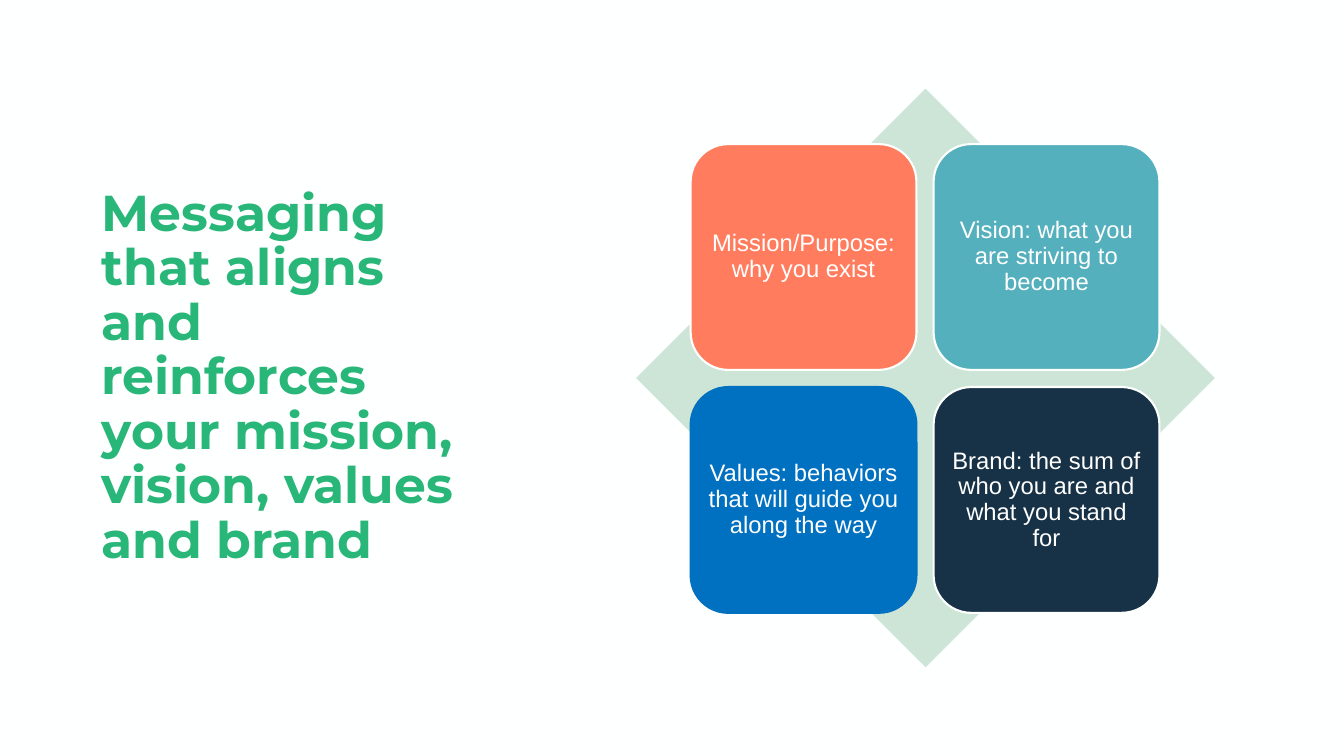
from dataclasses import dataclass

from pptx import Presentation
from pptx.dml.color import RGBColor
from pptx.enum.shapes import MSO_SHAPE
from pptx.enum.text import MSO_ANCHOR, PP_ALIGN
from pptx.util import Pt

PX = 9144  # EMU per px, 100 px to the inch


@dataclass(frozen=True)
class Theme:
    paper: str = "FEFFFF"
    title: str = "28B679"
    back: str = "CDE5D7"
    coral: str = "FF7D5E"
    teal: str = "54B0BD"
    blue: str = "0070C0"
    navy: str = "173246"
    text: str = "FFFFFF"
    head_font: str = "Montserrat"
    body_font: str = "Arial"
    head_size: int = 36
    body_size: int = 17
    edge: float = 1.5


THEME = Theme()
TITLE = "Messaging that aligns and reinforces your mission, vision, values and brand"
LEFT, TOP, SIDE, STEP = 685, 143, 224, 241
CARDS = [
    ("Mission/Purpose: why you exist", THEME.coral, THEME.paper),
    ("Vision: what you are striving to become", THEME.teal, THEME.paper),
    ("Values: behaviors that will guide you along the way", THEME.blue, THEME.blue),
    ("Brand: the sum of who you are and what you stand for", THEME.navy, THEME.paper),
]


def scale(*sizes):
    return [size * PX for size in sizes]


def apply(target, values):
    for name, value in values.items():
        setattr(target, name, value)


def paint(fill, color):
    fill.solid()
    fill.fore_color.rgb = RGBColor.from_string(color)


def write(shape, text, color, font, inset, align):
    """Fill a shape with one middle-anchored, wrapped paragraph."""
    frame = shape.text_frame
    apply(frame, {"word_wrap": True, "vertical_anchor": MSO_ANCHOR.MIDDLE, **inset})
    line = frame.paragraphs[0]
    apply(line, {"alignment": align, "line_spacing": 0.9})
    run = line.add_run()
    run.text = text
    apply(run.font, font)
    run.font.color.rgb = RGBColor.from_string(color)


def add_title(slide):
    box = slide.shapes.add_textbox(*scale(91, 111, 389, 529))
    font = {"name": THEME.head_font, "size": Pt(THEME.head_size), "bold": True}
    write(box, TITLE, THEME.title, font, {}, PP_ALIGN.LEFT)


def add_form(slide, kind, place, color):
    form = slide.shapes.add_shape(kind, *scale(*place))
    form.shadow.inherit = False
    paint(form.fill, color)
    form.line.fill.background()
    return form


def add_card(slide, spot, text, color, edge):
    """Place a card in the two-by-two grid by its running number."""
    row, col = divmod(spot, 2)
    place = (LEFT + col * STEP, TOP + row * STEP, SIDE, SIDE)
    card = add_form(slide, MSO_SHAPE.ROUNDED_RECTANGLE, place, color)
    paint(card.line.fill, edge)
    card.line.width = Pt(THEME.edge)
    font = {"name": THEME.body_font, "size": Pt(THEME.body_size)}
    inset = {f"margin_{side}": 7 * PX for side in ("left", "top", "right", "bottom")}
    write(card, text, THEME.text, font, inset, PP_ALIGN.CENTER)


def main():
    deck = Presentation()
    wide, high = scale(1333, 750)
    apply(deck, {"slide_width": wide, "slide_height": high})
    slide = deck.slides.add_slide(deck.slide_layouts[6])
    paint(slide.background.fill, THEME.paper)
    add_title(slide)
    add_form(slide, MSO_SHAPE.DIAMOND, (631, 88, 574, 574), THEME.back)
    for spot, card in enumerate(CARDS):
        add_card(slide, spot, *card)
    deck.save("out.pptx")


if __name__ == "__main__":
    main()
